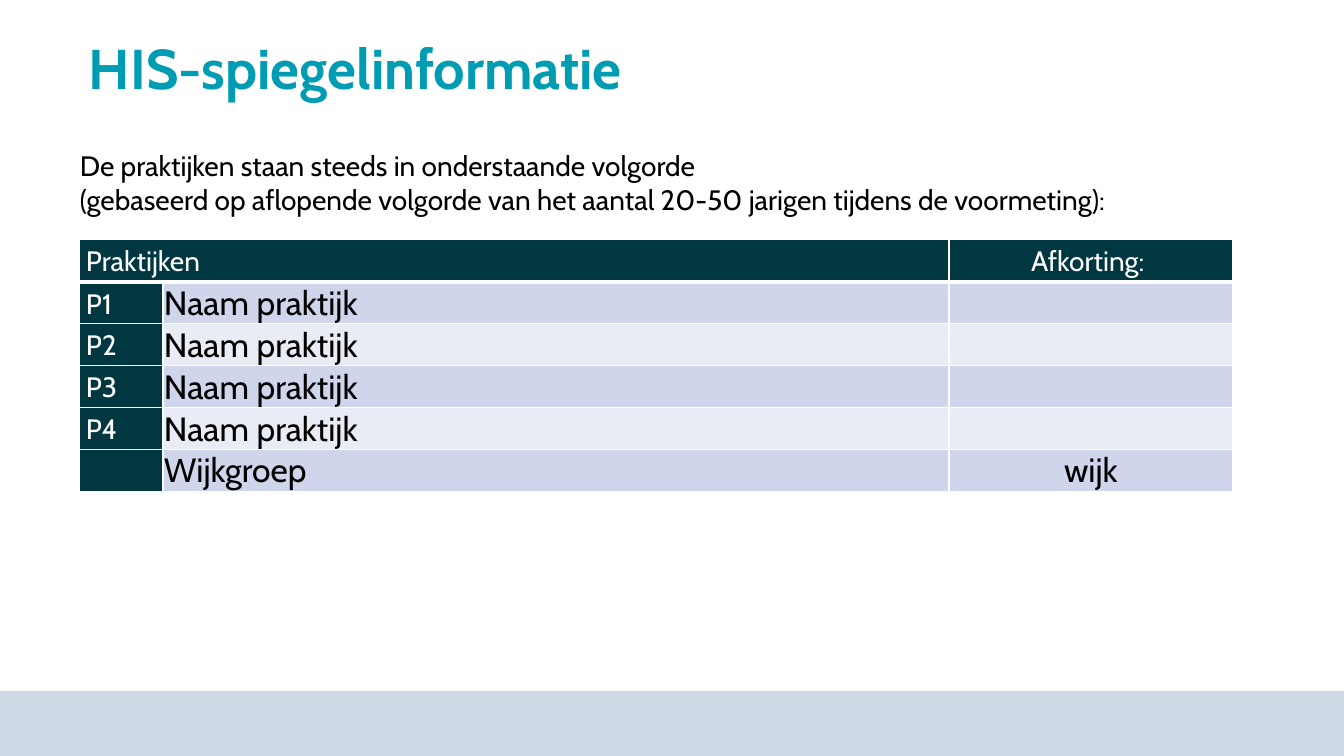
"""Build the slide that lists the practices and their abbreviations."""
from dataclasses import dataclass

import pptx
import pptx.dml.color
import pptx.enum.shapes
import pptx.enum.text
import pptx.oxml
import pptx.oxml.ns
import pptx.util

SLIDE_WIDTH, SLIDE_HEIGHT = 1344, 756
EMU_PER_PX = 12192000 / SLIDE_WIDTH
FONT = "Cabin"
COLOURS = {
    "title": "009CB4",
    "text": "000000",
    "light": "FFFFFF",
    "dark": "003741",
    "band": "CFD5EA",
    "pale": "E9EBF5",
    "footer": "CED9E5",
}
LEFT = pptx.enum.text.PP_ALIGN.LEFT
CENTER = pptx.enum.text.PP_ALIGN.CENTER
TOP = pptx.enum.text.MSO_ANCHOR.TOP
MIDDLE = pptx.enum.text.MSO_ANCHOR.MIDDLE
BOTTOM = pptx.enum.text.MSO_ANCHOR.BOTTOM


@dataclass(frozen=True)
class Style:
    size: int
    colour: str
    bold: bool = False
    line_spacing: float = 1.0
    space_after: int = 0
    anchor: pptx.enum.text.MSO_ANCHOR = TOP


@dataclass(frozen=True)
class TextBlock:
    left: int
    top: int
    width: int
    height: int
    lines: tuple[str, ...]
    style: Style


@dataclass(frozen=True)
class Practice:
    code: str
    name: str
    abbreviation: str = ""


LABEL = Style(20, "light", line_spacing=1.15, space_after=10)
ENTRY = Style(24, "text", anchor=BOTTOM)
TEXT_BLOCKS = (
    TextBlock(70, 143, 1173, 78, (
        "De praktijken staan steeds in onderstaande volgorde",
        "(gebaseerd op aflopende volgorde van het aantal 20-50 jarigen tijdens de voormeting):",
    ), Style(20, "text", anchor=MIDDLE)),
    TextBlock(79, 36, 1077, 72, ("HIS-spiegelinformatie",),
              Style(40, "title", bold=True, line_spacing=0.9)),
)
PRACTICES = (
    *(Practice(f"P{number}", "Naam praktijk") for number in range(1, 5)),
    Practice("", "Wijkgroep", "wijk"),
)
COLUMN_WIDTHS = (84, 786, 284)
HEADER_HEIGHT, ROW_HEIGHT = 43, 41


def px(length: int) -> pptx.util.Emu:
    return pptx.util.Emu(round(length * EMU_PER_PX))


def rgb(name: str) -> pptx.dml.color.RGBColor:
    return pptx.dml.color.RGBColor.from_string(COLOURS[name])


def write_line(paragraph, line: str, style: Style, align=LEFT) -> None:
    paragraph.alignment = align
    paragraph.line_spacing = style.line_spacing
    paragraph.space_after = pptx.util.Pt(style.space_after)
    run = paragraph.add_run()
    run.text = line
    run.font.name = FONT
    run.font.size = pptx.util.Pt(style.size)
    run.font.bold = style.bold
    run.font.color.rgb = rgb(style.colour)


def add_text(slide, block: TextBlock) -> None:
    box = slide.shapes.add_textbox(px(block.left), px(block.top), px(block.width), px(block.height))
    frame = box.text_frame
    frame.word_wrap = True
    frame.vertical_anchor = block.style.anchor
    for index, line in enumerate(block.lines):
        paragraph = frame.add_paragraph() if index else frame.paragraphs[0]
        write_line(paragraph, line, block.style)


def set_borders(cell, widths: dict[str, int]) -> None:
    properties = cell._tc.get_or_add_tcPr()
    for side, width in widths.items():
        properties.append(pptx.oxml.parse_xml(
            f'<a:ln{side} {pptx.oxml.ns.nsdecls("a")} w="{pptx.util.Pt(width)}"><a:solidFill>'
            f'<a:srgbClr val="{COLOURS["light"]}"/></a:solidFill></a:ln{side}>'
        ))


def fill_cell(cell, line: str, style: Style, fill: str, top: int = 1, bottom: int = 1,
              align=LEFT) -> None:
    set_borders(cell, {"L": 1, "R": 1, "T": top, "B": bottom})
    cell.fill.solid()
    cell.fill.fore_color.rgb = rgb(fill)
    cell.vertical_anchor = style.anchor
    cell.margin_left = cell.margin_right = px(7 if style == LABEL else 1)
    cell.margin_top = px(0 if style == LABEL else 1)
    cell.margin_bottom = 0
    if line:
        write_line(cell.text_frame.paragraphs[0], line, style, align)


def add_practices(slide) -> None:
    height = HEADER_HEIGHT + ROW_HEIGHT * len(PRACTICES)
    table = slide.shapes.add_table(len(PRACTICES) + 1, len(COLUMN_WIDTHS), px(79), px(239),
                                   px(sum(COLUMN_WIDTHS)), px(height)).table
    table.first_row = False
    table.horz_banding = False
    for column, width in zip(table.columns, COLUMN_WIDTHS):
        column.width = px(width)
    for index, row in enumerate(table.rows):
        row.height = px(ROW_HEIGHT if index else HEADER_HEIGHT)

    table.cell(0, 0).merge(table.cell(0, 1))
    for column, heading in enumerate(("Praktijken", "", "Afkorting: ")):
        fill_cell(table.cell(0, column), heading, LABEL, "dark", bottom=3,
                  align=CENTER if column == 2 else LEFT)
    for row, practice in enumerate(PRACTICES, start=1):
        band = "band" if row % 2 else "pale"
        top = 3 if row == 1 else 1
        fill_cell(table.cell(row, 0), practice.code, LABEL, "dark", top)
        fill_cell(table.cell(row, 1), practice.name, ENTRY, band, top)
        fill_cell(table.cell(row, 2), practice.abbreviation, ENTRY, band, top, align=CENTER)


def add_footer(slide) -> None:
    top = 691
    footer = slide.shapes.add_shape(pptx.enum.shapes.MSO_SHAPE.RECTANGLE, 0, px(top),
                                    px(SLIDE_WIDTH), px(SLIDE_HEIGHT - top))
    footer.shadow.inherit = False
    footer.fill.solid()
    footer.fill.fore_color.rgb = rgb("footer")
    footer.line.fill.background()


def main() -> None:
    presentation = pptx.Presentation()
    presentation.slide_width = px(SLIDE_WIDTH)
    presentation.slide_height = px(SLIDE_HEIGHT)
    slide = presentation.slides.add_slide(presentation.slide_layouts[6])
    add_footer(slide)
    add_practices(slide)
    for block in TEXT_BLOCKS:
        add_text(slide, block)
    presentation.save("out.pptx")


if __name__ == "__main__":
    main()
